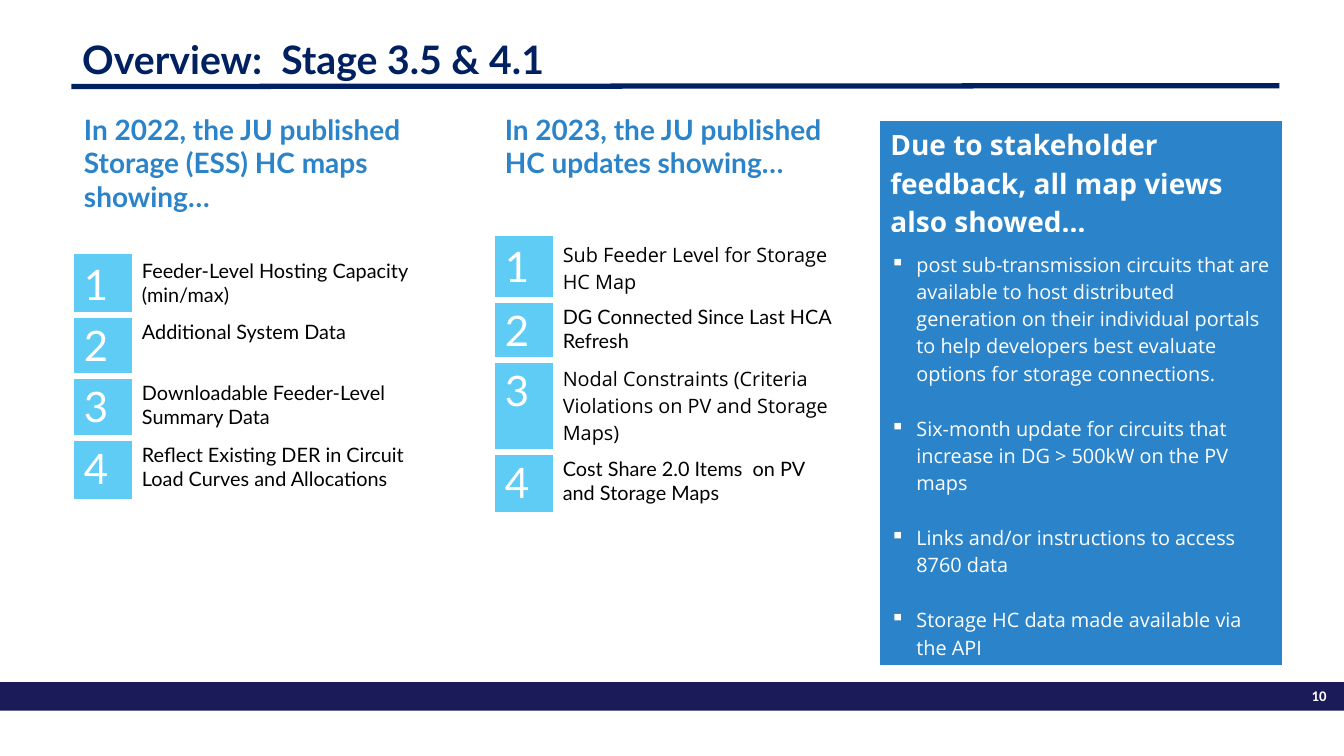
import pptx
import pptx.dml.color
import pptx.enum.shapes
import pptx.enum.text
import pptx.util
from lxml import etree
from pptx.util import Inches

NAMESPACE = "{http://schemas.openxmlformats.org/drawingml/2006/main}"
NAVY, BLUE, SKY, WHITE, BLACK = "002060", "2B84C9", "5ECCF5", "FFFFFF", "000000"


def paint(fill, color):
    fill.solid()
    fill.fore_color.rgb = pptx.dml.color.RGBColor.from_string(color)


def write(paragraph, text, color, size, name, bold=False):
    run = paragraph.add_run()
    run.text = text
    formats = {"size": pptx.util.Pt(size), "name": name, "bold": bold}
    for attribute, value in formats.items():
        setattr(run.font, attribute, value)
    paint(run.font.fill, color)


presentation = pptx.Presentation()
presentation.slide_width = Inches(16)
presentation.slide_height = Inches(9)
slide = presentation.slides.add_slide(presentation.slide_layouts[6])
shapes = slide.shapes

footer = shapes.add_shape(
    pptx.enum.shapes.MSO_SHAPE.RECTANGLE, 0, Inches(8.12), Inches(16), Inches(0.34)
)
footer.shadow.inherit = False
paint(footer.fill, "1B1B59")
footer.line.fill.background()

title_rule = shapes.add_connector(
    pptx.enum.shapes.MSO_CONNECTOR.STRAIGHT,
    Inches(0.85), Inches(1.03), Inches(15.23), Inches(1.02),
)
paint(title_rule.line.fill, NAVY)
title_rule.line.width = pptx.util.Pt(4.5)
etree.SubElement(title_rule._element.spPr, NAMESPACE + "effectLst")

text_boxes = [
    ((15.23, 8.13, 0.66, 0.31), "10", WHITE, 12.6, "Calibri", "RIGHT", 1),
    ((0.88, 0.47, 10.79, 0.54), "Overview:  Stage 3.5 & 4.1", NAVY, 33.6, "Lato", "LEFT", 0.9),
]
for box, text, color, size, name, alignment, spacing in text_boxes:
    frame = shapes.add_textbox(*map(Inches, box)).text_frame
    frame.word_wrap = True
    frame.vertical_anchor = pptx.enum.text.MSO_ANCHOR.MIDDLE
    paragraph = frame.paragraphs[0]
    paragraph.alignment = getattr(pptx.enum.text.PP_ALIGN, alignment)
    paragraph.line_spacing = spacing
    write(paragraph, text, color, size, name, True)

step_tables = [
    (0.88, [1.74, 0.73, 0.73, 0.73, 0.73],
     "In 2022, the JU published Storage (ESS) HC maps showing…",
     [("Feeder-Level Hosting Capacity (min/max)", "Lato"),
      ("Additional System Data", "Lato"),
      ("Downloadable Feeder-Level Summary Data", "Lato"),
      ("Reflect Existing DER in Circuit Load Curves and Allocations", "Lato")]),
    (5.89, [1.53, 0.76, 0.72, 1.09, 0.72],
     "In 2023, the JU published HC updates showing…",
     [("Sub Feeder Level for Storage HC Map", "Open Sans"),
      ("DG Connected Since Last HCA Refresh", "Lato"),
      ("Nodal Constraints (Criteria Violations on PV and Storage Maps)", "Open Sans"),
      ("Cost Share 2.0 Items  on PV and Storage Maps", "Lato")]),
]
tables = []
for left, heights, heading, steps in step_tables:
    table = shapes.add_table(
        5, 2, Inches(left), Inches(1.28), Inches(4.2), Inches(sum(heights))
    ).table
    tables.append((table, [0.69, 3.51], heights))
    for cell in table.iter_cells():
        paint(cell.fill, WHITE)
    table.cell(0, 0).merge(table.cell(0, 1))
    write(table.cell(0, 0).text_frame.paragraphs[0], heading, BLUE, 24, "Lato", True)
    for number, (step, name) in enumerate(steps, 1):
        number_cell, step_cell = table.cell(number, 0), table.cell(number, 1)
        paint(number_cell.fill, SKY)
        write(number_cell.text_frame.paragraphs[0], str(number), WHITE, 36, "Lato")
        write(step_cell.text_frame.paragraphs[0], step, BLACK, 17, name)

feedback = [
    "post sub-transmission circuits that are available to host distributed generation "
    "on their individual portals to help developers best evaluate options for storage connections.",
    "Six-month update for circuits that increase in DG > 500kW on the PV maps",
    "Links and/or instructions to access 8760 data",
    "Storage HC data made available via the API",
]
feedback_heights = [1.32, 5.16]
feedback_table = shapes.add_table(
    2, 1, Inches(10.48), Inches(1.44), Inches(4.78), Inches(sum(feedback_heights))
).table
tables.append((feedback_table, [4.78], feedback_heights))
for cell in feedback_table.iter_cells():
    paint(cell.fill, BLUE)
write(
    feedback_table.cell(0, 0).text_frame.paragraphs[0],
    "Due to stakeholder feedback, all map views also showed…", WHITE, 24, "Open Sans", True,
)
feedback_frame = feedback_table.cell(1, 0).text_frame
for index, text in enumerate(feedback):
    paragraph = feedback_frame.add_paragraph() if index else feedback_frame.paragraphs[0]
    properties = paragraph._p.get_or_add_pPr()
    properties.set("marL", str(Inches(0.31)))
    properties.set("indent", str(Inches(-0.31)))
    etree.SubElement(properties, NAMESPACE + "buChar", char="▪")
    paragraph.space_before = pptx.util.Pt(12 if index else 0)
    paragraph.space_after = pptx.util.Pt(12 if index < len(feedback) - 1 else 0)
    write(paragraph, text, WHITE, 17, "Open Sans")

margins = {"margin_left": 0.12, "margin_right": 0.12, "margin_top": 0.06, "margin_bottom": 0.06}
for table, widths, heights in tables:
    table.first_row = False
    table.horz_banding = False
    for column, width in zip(table.columns, widths):
        column.width = Inches(width)
    last = len(heights) - 1
    for index, (row, height) in enumerate(zip(table.rows, heights)):
        row.height = Inches(height)
        white_sides = {"lnT": index > 1, "lnB": 0 < index < last}
        for cell in row.cells:
            for attribute, value in margins.items():
                setattr(cell, attribute, Inches(value))
            for position, side in enumerate(["lnL", "lnR", "lnT", "lnB"]):
                line = etree.Element(NAMESPACE + side)
                if white_sides.get(side):
                    line.set("w", str(pptx.util.Pt(6)))
                    solid = etree.SubElement(line, NAMESPACE + "solidFill")
                    etree.SubElement(solid, NAMESPACE + "srgbClr", val=WHITE)
                else:
                    etree.SubElement(line, NAMESPACE + "noFill")
                cell._tc.get_or_add_tcPr().insert(position, line)
feedback_table.cell(1, 0).margin_top = Inches(0.23)

presentation.save("out.pptx")
